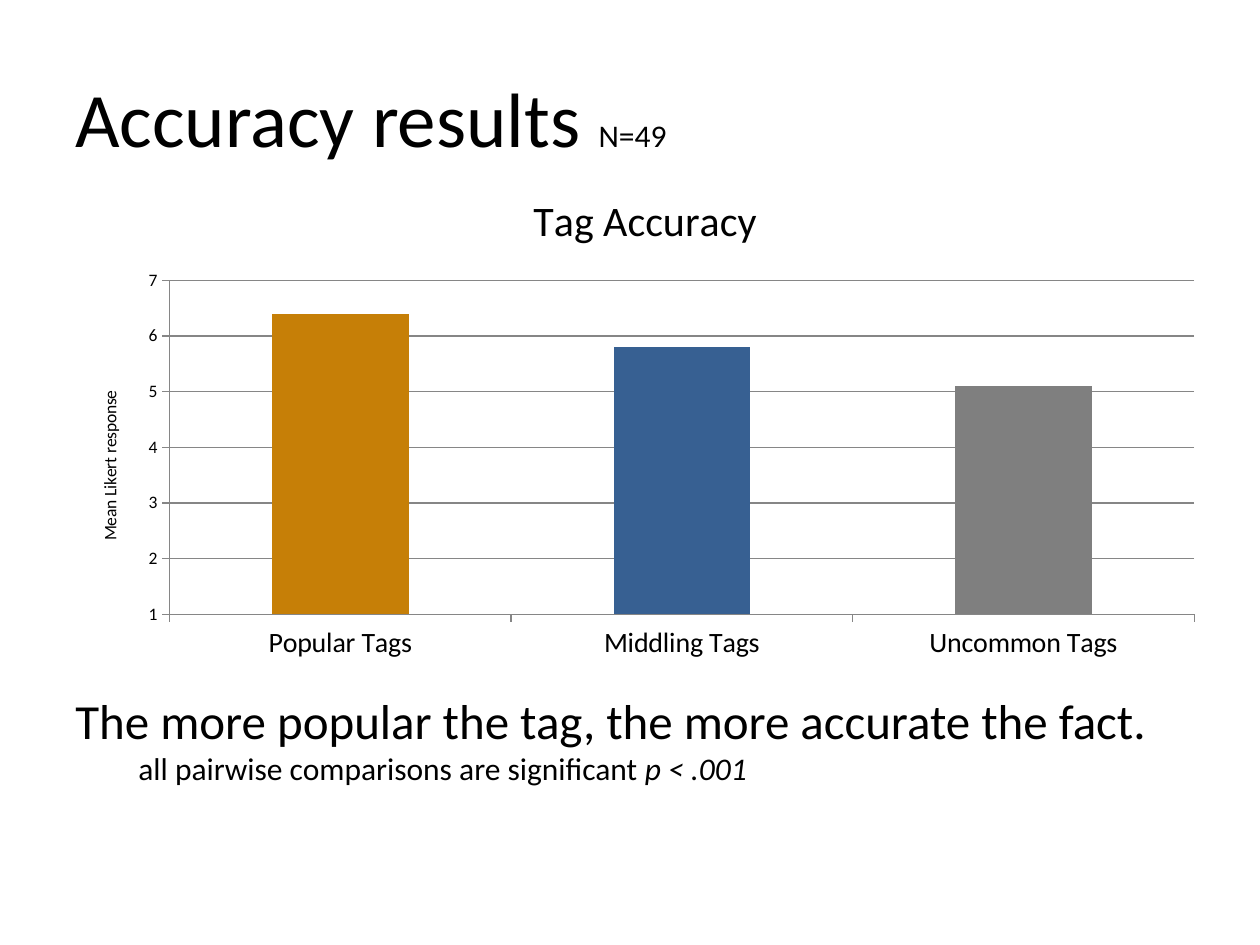
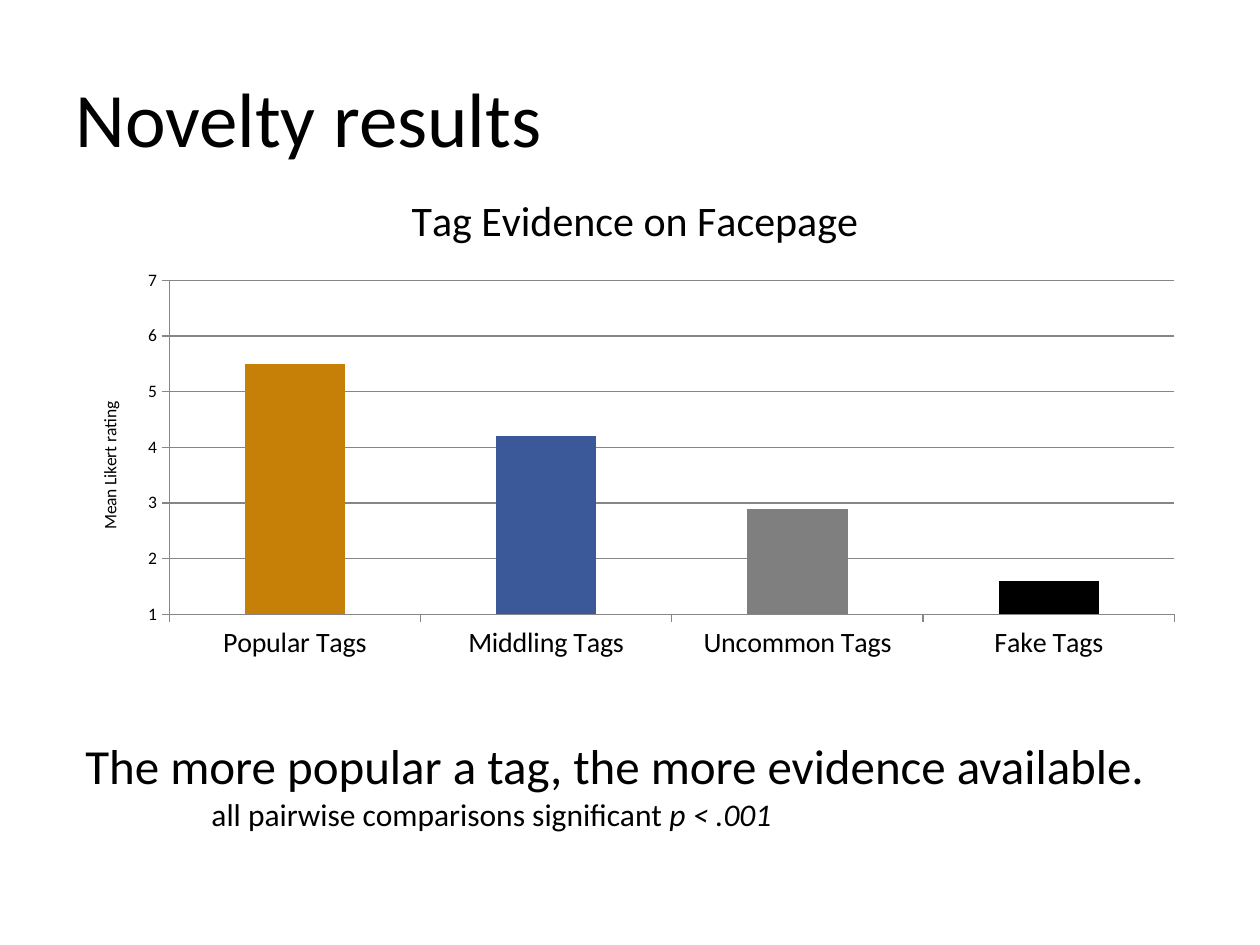
"""Build two survey result slides, each with a title, a column chart and a finding."""
from pptx import Presentation
from pptx.chart.data import CategoryChartData
from pptx.dml.color import RGBColor
from pptx.enum.chart import XL_CHART_TYPE, XL_TICK_MARK
from pptx.enum.text import MSO_ANCHOR
from pptx.util import Inches, Pt

COLUMN = XL_CHART_TYPE.COLUMN_CLUSTERED
OUTSIDE = XL_TICK_MARK.OUTSIDE
MIDDLE, TOP = MSO_ANCHOR.MIDDLE, MSO_ANCHOR.TOP
W, H = Inches(10), Inches(7.5)
FONT = "Calibri"
COLORS = {
    "text": "000000", "line": "868686", "popular": "C67F07", "steel": "376092",
    "indigo": "3B5998", "uncommon": "7F7F7F", "fake": "000000",
}
TITLE_BOX = (0.05, 0.04, 0.9, 0.167)

SLIDES = [
    {
        "title": [("Accuracy results ", 44, False), ("N=49", 18, False)],
        "chart": "Tag Accuracy",
        "axis": "Mean Likert response",
        "chart_box": (0.058, 0.177, 0.908, 0.533),
        "bars": [("Popular Tags", 6.4, "popular"), ("Middling Tags", 5.8, "steel"),
                 ("Uncommon Tags", 5.1, "uncommon")],
        "finding": "The more popular the tag, the more accurate the fact.",
        "detail": "all pairwise comparisons are significant ",
        "indent": 0.5,
        "finding_box": (0.05, 0.724, 0.889, 0.117),
    },
    {
        "title": [("Novelty results", 44, False)],
        "chart": "Tag Evidence on Facepage",
        "axis": "Mean Likert rating",
        "chart_box": (0.058, 0.177, 0.892, 0.533),
        "bars": [("Popular Tags", 5.5, "popular"), ("Middling Tags", 4.2, "indigo"),
                 ("Uncommon Tags", 2.9, "uncommon"), ("Fake Tags", 1.6, "fake")],
        "finding": "The more popular a tag, the more evidence available.",
        "detail": "all pairwise comparisons significant ",
        "indent": 1,
        "finding_box": (0.058, 0.772, 0.933, 0.117),
    },
]


def place(box):
    left, top, width, height = box
    return round(left * W), round(top * H), round(width * W), round(height * H)


def add_text(s, box, paragraphs, anchor):
    tf = s.shapes.add_textbox(*place(box)).text_frame
    tf.word_wrap = True
    tf.vertical_anchor = anchor
    for i, (indent, runs) in enumerate(paragraphs):
        p = tf.add_paragraph() if i else tf.paragraphs[0]
        p._p.get_or_add_pPr().set("marL", str(Inches(indent)))
        for text, size, italic in runs:
            r = p.add_run()
            r.text = text
            for name, value in {"name": FONT, "size": Pt(size), "italic": italic}.items():
                setattr(r.font, name, value)
            r.font.color.rgb = RGBColor.from_string(COLORS["text"])


prs = Presentation()
prs.slide_width, prs.slide_height = W, H

for spec_row in SLIDES:
    s = prs.slides.add_slide(prs.slide_layouts[6])
    add_text(s, TITLE_BOX, [(0, spec_row["title"])], MIDDLE)
    finding = [
        (0, [(spec_row["finding"], 28, False)]),
        (spec_row["indent"], [(spec_row["detail"], 18, False), ("p < .001", 18, True)]),
    ]
    add_text(s, spec_row["finding_box"], finding, TOP)

    data = CategoryChartData()
    data.categories = [label for label, _, _ in spec_row["bars"]]
    data.add_series("Series 1", [value for _, value, _ in spec_row["bars"]])
    chart = s.shapes.add_chart(COLUMN, *place(spec_row["chart_box"]), data).chart
    chart.has_legend = False
    chart.font.name = FONT
    chart.font.size = Pt(10)
    chart.font.color.rgb = RGBColor.from_string(COLORS["text"])

    cat, val = chart.category_axis, chart.value_axis
    for name, value in {"minimum_scale": 1, "maximum_scale": 7, "major_unit": 1,
                        "has_major_gridlines": True}.items():
        setattr(val, name, value)
    cat.tick_labels.font.size = Pt(16)
    for axis in (cat, val):
        axis.major_tick_mark = OUTSIDE
    for line in (cat.format.line, val.format.line, val.major_gridlines.format.line):
        line.color.rgb = RGBColor.from_string(COLORS["line"])
        line.width = Pt(0.75)

    for owner, text, size in ((chart, spec_row["chart"], 24), (val, spec_row["axis"], 10)):
        title = owner.chart_title if owner is chart else owner.axis_title
        title.text_frame.text = text
        font = title.text_frame.paragraphs[0].runs[0].font
        for name, value in {"name": FONT, "size": Pt(size), "bold": False}.items():
            setattr(font, name, value)
        font.color.rgb = RGBColor.from_string(COLORS["text"])

    plot = chart.plots[0]
    plot.vary_by_categories = False
    plot.gap_width = 150
    for i, (_, _, color) in enumerate(spec_row["bars"]):
        fill = plot.series[0].points[i].format.fill
        fill.solid()
        fill.fore_color.rgb = RGBColor.from_string(COLORS[color])

prs.save("out.pptx")
